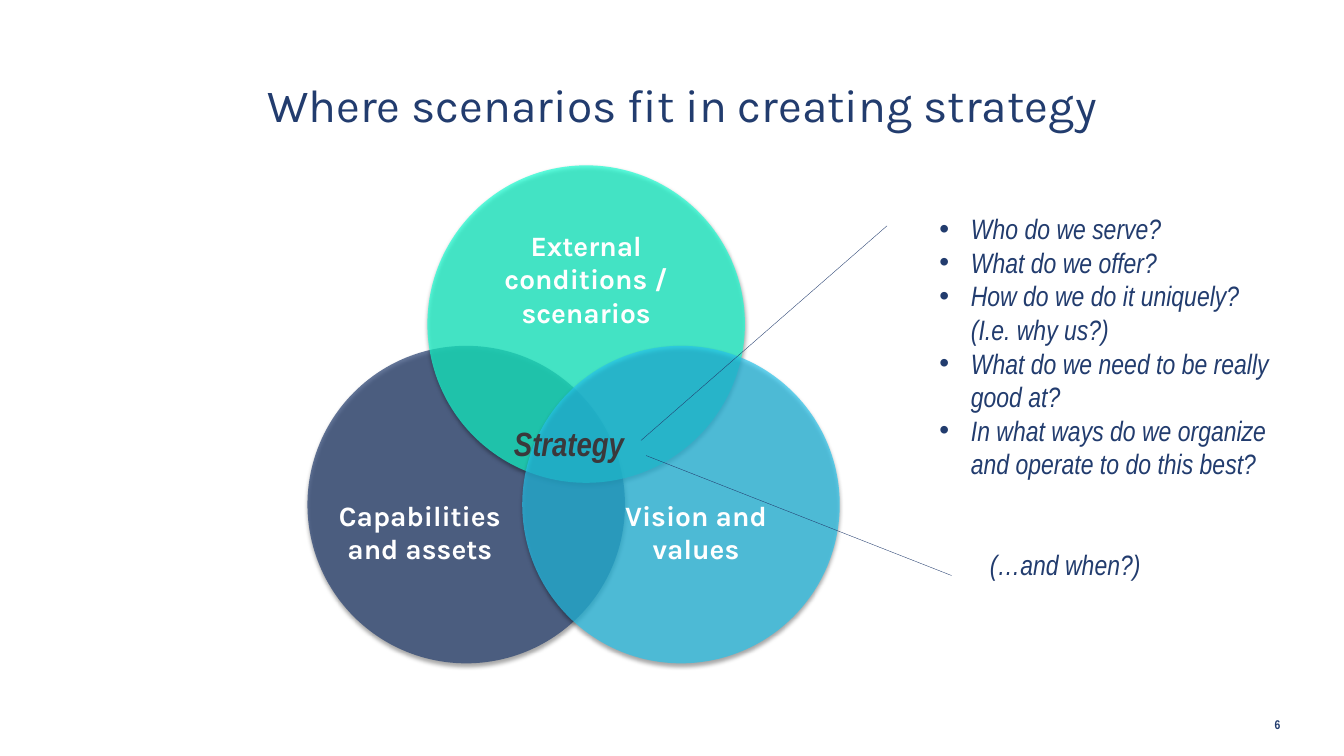
from lxml.etree import SubElement
from pptx import Presentation
from pptx.dml.color import RGBColor
from pptx.enum.shapes import MSO_CONNECTOR as Connector, MSO_SHAPE as Shape
from pptx.enum.text import MSO_ANCHOR as Anchor, MSO_AUTO_SIZE as AutoSize, PP_ALIGN as Align
from pptx.oxml.ns import qn
from pptx.util import Pt

NAVY = RGBColor(0x22, 0x3C, 0x6E)
MINT = RGBColor(0x17, 0xFF, 0xD2)
SKY = RGBColor(0x26, 0xC3, 0xEB)
CHARCOAL = RGBColor(0x3B, 0x38, 0x3B)
WHITE = RGBColor(0xFF, 0xFF, 0xFF)
HEADING_FONT = "Karla"
BODY_FONT = "Arial Narrow"
DIAMETER = 226.8

CIRCLES = [
    (219.6, 247, NAVY),
    (305.3, 118.1, MINT),
    (373, 247, SKY),
]
LABELS = [
    ("External conditions / scenarios", (326.9, 172.8, 183.6, 52.6)),
    ("Capabilities and assets", (226.8, 353.5, 146.2, 52.6)),
    ("Vision and values", (424.1, 353.5, 146.2, 52.6)),
]
QUESTIONS = [
    "Who do we serve?",
    "What do we offer?",
    "How do we do it uniquely? \n(I.e. why us?)",
    "What do we need to be really good at?",
    "In what ways do we organize and operate to do this best?",
]
CALLOUTS = [
    (457.9, 314.6, 633.6, 161.3),
    (461.5, 325.4, 679.7, 411.1),
]


def place(shape, left, top, width, height):
    shape.left, shape.top = Pt(left), Pt(top)
    shape.width, shape.height = Pt(width), Pt(height)


def add_run(paragraph, text, font, size, color, bold=False, italic=False):
    run = paragraph.add_run()
    run.text = text
    run.font.name, run.font.size = font, Pt(size)
    run.font.bold, run.font.italic = bold, italic
    run.font.color.rgb = color


def add_label(shapes, text, box, font, size, color, align=Align.CENTER,
              inset=None, italic=False):
    """Add a bold, vertically centred text box."""
    frame = shapes.add_textbox(*map(Pt, box)).text_frame
    frame.word_wrap = True
    frame.vertical_anchor = Anchor.MIDDLE
    if inset is not None:
        frame.margin_left = frame.margin_right = Pt(inset)
        frame.margin_top = frame.margin_bottom = Pt(inset)
    paragraph = frame.paragraphs[0]
    paragraph.alignment = align
    add_run(paragraph, text, font, size, color, bold=True, italic=italic)


def add_circle(shapes, left, top, color):
    """Add a translucent circle with a soft shadow below it."""
    circle = shapes.add_shape(Shape.OVAL, *map(Pt, (left, top, DIAMETER, DIAMETER)))
    circle.fill.solid()
    circle.fill.fore_color.rgb = color
    circle.line.fill.background()
    circle.shadow.inherit = False
    properties = circle.element.spPr
    fill_color = properties.find(qn("a:solidFill")).find(qn("a:srgbClr"))
    SubElement(fill_color, qn("a:alpha"), val="69000")
    shadow = SubElement(properties.find(qn("a:effectLst")), qn("a:outerShdw"),
                        blurRad=str(Pt(3)), dist=str(Pt(2)), dir="5400000",
                        rotWithShape="0")
    shadow_color = SubElement(shadow, qn("a:srgbClr"), val="000000")
    SubElement(shadow_color, qn("a:alpha"), val="50000")


def add_callout(shapes, *ends):
    line = shapes.add_connector(Connector.STRAIGHT, *map(Pt, ends))
    line.line.color.rgb = NAVY
    line.line.width = Pt(0.25)
    SubElement(line.element.spPr, qn("a:effectLst"))


def set_indent(paragraph, left, first_line, bullet=None):
    properties = paragraph._p.get_or_add_pPr()
    properties.set("marL", str(Pt(left)))
    properties.set("indent", str(Pt(first_line)))
    if bullet:
        SubElement(properties, qn("a:buFont"), typeface="Arial")
        SubElement(properties, qn("a:buChar"), char=bullet)
    else:
        SubElement(properties, qn("a:buNone"))


def fill_title(title):
    place(title, 142.6, 55.4, 689.8, 106.6)
    frame = title.text_frame
    frame.auto_size = AutoSize.NONE
    frame.vertical_anchor = Anchor.TOP
    paragraph = frame.paragraphs[0]
    paragraph.alignment = Align.CENTER
    paragraph.line_spacing = 0.9
    add_run(paragraph, "Where scenarios fit in creating strategy", HEADING_FONT, 33, NAVY)


def fill_questions(body):
    place(body, 663.8, 147.6, 260.6, 298.1)
    frame = body.text_frame
    frame.auto_size = AutoSize.NONE
    frame.vertical_anchor = Anchor.TOP
    for index, question in enumerate(QUESTIONS):
        paragraph = frame.paragraphs[0] if index == 0 else frame.add_paragraph()
        paragraph.space_before = Pt(0)
        set_indent(paragraph, 22.5, -22.5, "•")
        for number, text in enumerate(question.split("\n")):
            if number:
                paragraph.add_line_break()
            add_run(paragraph, text, BODY_FONT, 20, NAVY, italic=True)
    closing = frame.add_paragraph()
    closing.space_before = Pt(48)
    set_indent(closing, 36, 0)
    add_run(closing, "(…and when?)", BODY_FONT, 20, NAVY, italic=True)


def main():
    presentation = Presentation()
    presentation.slide_width, presentation.slide_height = Pt(960), Pt(540)
    slide = presentation.slides.add_slide(presentation.slide_layouts[1])
    shapes = slide.shapes
    fill_title(shapes.title)
    fill_questions(slide.placeholders[1])
    add_label(shapes, "6", (867.6, 503.3, 54, 28.8), BODY_FONT, 9, NAVY, Align.RIGHT)

    venn = shapes.add_group_shape().shapes
    for left, top, color in CIRCLES:
        add_circle(venn, left, top, color)
    for text, box in LABELS:
        add_label(venn, text, box, HEADING_FONT, 20, WHITE, inset=2)

    add_label(shapes, "Strategy", (351.4, 298.8, 110.2, 36), BODY_FONT, 24, CHARCOAL,
              italic=True)
    for ends in CALLOUTS:
        add_callout(shapes, *ends)
    presentation.save("out.pptx")


if __name__ == "__main__":
    main()
